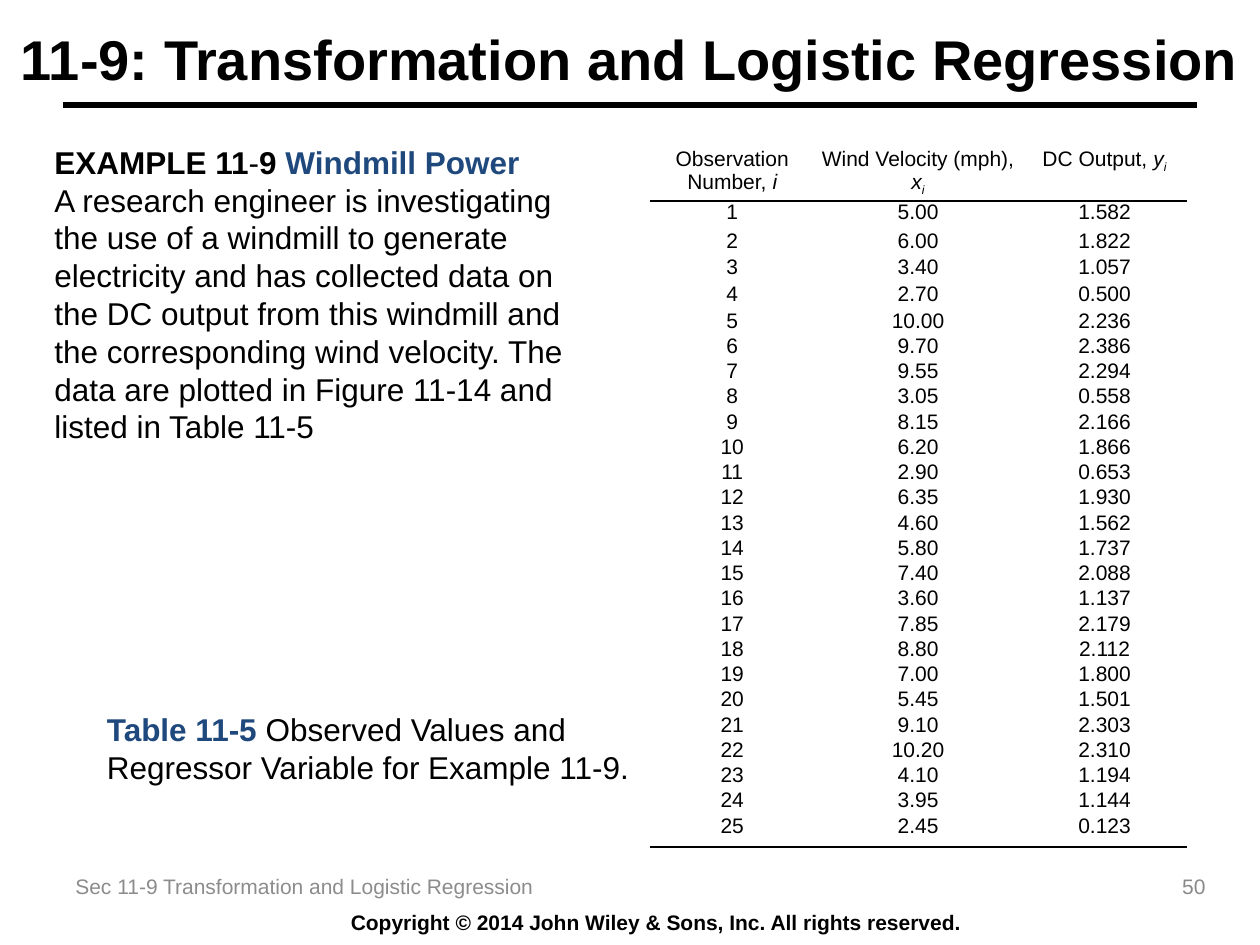
"""Build the windmill power slide with its table of observed values."""
from dataclasses import dataclass

from lxml.etree import SubElement as Sub
from pptx import Presentation
from pptx.dml.color import RGBColor as RGB
from pptx.enum.shapes import MSO_CONNECTOR as Link
from pptx.enum.text import MSO_ANCHOR as Anchor, MSO_AUTO_SIZE as Auto, PP_ALIGN as Align
from pptx.oxml import parse_xml
from pptx.oxml.ns import nsdecls, qn
from pptx.util import Pt

BLACK, BLUE = "000000", "1F497D"


@dataclass
class Part:
    """A run of text and its look."""
    text: str
    bold: bool = False
    ital: bool = False
    color: str = BLACK
    base: int = 0


@dataclass
class Box:
    """A text box in points."""
    left: float
    top: float
    width: float
    height: float
    size: float
    lines: list[list[Part]]
    align: Align = Align.LEFT
    fit: bool = True


BOXES = [
    Box(120, 516, 510, 21.6, 12, [[
        Part("Copyright © 2014 John Wiley & Sons, Inc. All rights reserved.", True)]], Align.CENTER),
    Box(54, 402, 348, 51, 18, [[
        Part("Table 11-5 ", True, color=BLUE),
        Part("Observed Values and Regressor Variable for Example 11-9.")]]),
    Box(612, 492, 84, 28.8, 12, [[Part("50", color="898989")]], Align.RIGHT, False),
    Box(24, 78, 324, 181.5, 18, [
        [Part("EXAMPLE 11", True), Part("-"), Part("9 ", True),
         Part("Windmill Power", True, color=BLUE)],
        [Part("A research engineer is investigating the use of a windmill to generate "
              "electricity and has collected data on the DC output from this windmill and "
              "the corresponding wind velocity. The data are plotted in Figure 11-14 and "
              "listed in Table 11-5")]]),
    Box(36, 492, 390, 28.8, 12, [[
        Part("Sec 11-9 Transformation and Logistic Regression", color="8C8C8C")]], fit=False),
]

HEAD = [
    [Part("Observation Number, "), Part("i", ital=True)],
    [Part("Wind Velocity (mph), "), Part("x", ital=True), Part("i", ital=True, base=-25)],
    [Part("DC Output, "), Part("y", ital=True), Part("i", ital=True, base=-25)],
]
SPEED = ("5.00 6.00 3.40 2.70 10.00 9.70 9.55 3.05 8.15 6.20 2.90 6.35 4.60 "
         "5.80 7.40 3.60 7.85 8.80 7.00 5.45 9.10 10.20 4.10 3.95 2.45").split()
POWER = ("1.582 1.822 1.057 0.500 2.236 2.386 2.294 0.558 2.166 1.866 0.653 1.930 1.562 "
         "1.737 2.088 1.137 2.179 2.112 1.800 1.501 2.303 2.310 1.194 1.144 0.123").split()
WIDTHS = [92.9, 119.5, 93.6]
TALLS = [23, 16.6, 14.4, 15.8, 15.1] + [14.4] * 20 + [18.7]


def tint(code: str) -> RGB:
    """Turn a hex string into a colour."""
    return RGB.from_string(code)


def write(para, parts: list[Part], size: float, align: Align) -> None:
    """Fill a paragraph with formatted runs."""
    para.alignment = align
    for part in parts:
        run = para.add_run()
        run.text = part.text
        font = run.font
        font.name, font.size = "Arial", Pt(size)
        font.bold, font.italic = part.bold, part.ital
        font.color.rgb = tint(part.color)
        if part.base:
            run._r.get_or_add_rPr().set("baseline", str(part.base * 1000))


def draw_box(slide, box: Box) -> None:
    """Draw one text box."""
    shape = slide.shapes.add_textbox(Pt(box.left), Pt(box.top), Pt(box.width), Pt(box.height))
    frame = shape.text_frame
    frame.word_wrap = True
    frame.auto_size = Auto.SHAPE_TO_FIT_TEXT if box.fit else Auto.NONE
    frame.vertical_anchor = Anchor.TOP if box.fit else Anchor.MIDDLE
    for n, parts in enumerate(box.lines):
        para = frame.add_paragraph() if n else frame.paragraphs[0]
        write(para, parts, box.size, box.align)


def draw_title(slide, text: str) -> None:
    """Fill the title and rule a line below it."""
    title = slide.shapes.title
    title.left, title.top, title.width, title.height = Pt(0), Pt(0), Pt(720), Pt(66)
    frame = title.text_frame
    frame.auto_size, frame.vertical_anchor = Auto.NONE, Anchor.MIDDLE
    write(frame.paragraphs[0], [Part(text, True)], 32, Align.CENTER)
    rule = slide.shapes.add_connector(Link.STRAIGHT, Pt(36), Pt(60), Pt(684), Pt(60))
    rule.line.color.rgb, rule.line.width = tint(BLACK), Pt(3)
    Sub(rule._element.spPr, qn("a:effectLst"))


def edge(cell, side: str) -> None:
    """Rule one side of a cell."""
    cell._tc.get_or_add_tcPr().insert(0, parse_xml(
        f'<a:ln{side} {nsdecls("a")} w="{Pt(1)}"><a:solidFill>'
        f'<a:srgbClr val="{BLACK}"/></a:solidFill></a:ln{side}>'))


def draw_table(slide) -> None:
    """Draw the table of observed values."""
    data = [[Part(text)] for row in zip(range(1, 26), SPEED, POWER) for text in map(str, row)]
    cells = HEAD + data
    grid = slide.shapes.add_table(len(TALLS), len(WIDTHS), Pt(372), Pt(84),
                                  Pt(sum(WIDTHS)), Pt(sum(TALLS))).table
    grid.first_row = grid.horz_banding = False
    for col, width in zip(grid.columns, WIDTHS):
        col.width = Pt(width)
    for row, tall in zip(grid.rows, TALLS):
        row.height = Pt(tall)
    sides = {0: "B", 1: "T", len(TALLS) - 1: "B"}
    for n, (cell, parts) in enumerate(zip(grid.iter_cells(), cells)):
        cell.margin_left = cell.margin_right = Pt(1.5)
        cell.margin_top = cell.margin_bottom = Pt(0)
        cell.fill.background()
        write(cell.text_frame.paragraphs[0], parts, 12, Align.CENTER)
        side = sides.get(n // len(WIDTHS))
        if side:
            edge(cell, side)


def main() -> None:
    """Build and save the slide."""
    deck = Presentation()
    deck.slide_width, deck.slide_height = Pt(720), Pt(540)
    slide = deck.slides.add_slide(deck.slide_layouts[5])
    draw_title(slide, "11-9: Transformation and Logistic Regression")
    for box in BOXES:
        draw_box(slide, box)
    draw_table(slide)
    deck.save("out.pptx")


if __name__ == "__main__":
    main()
